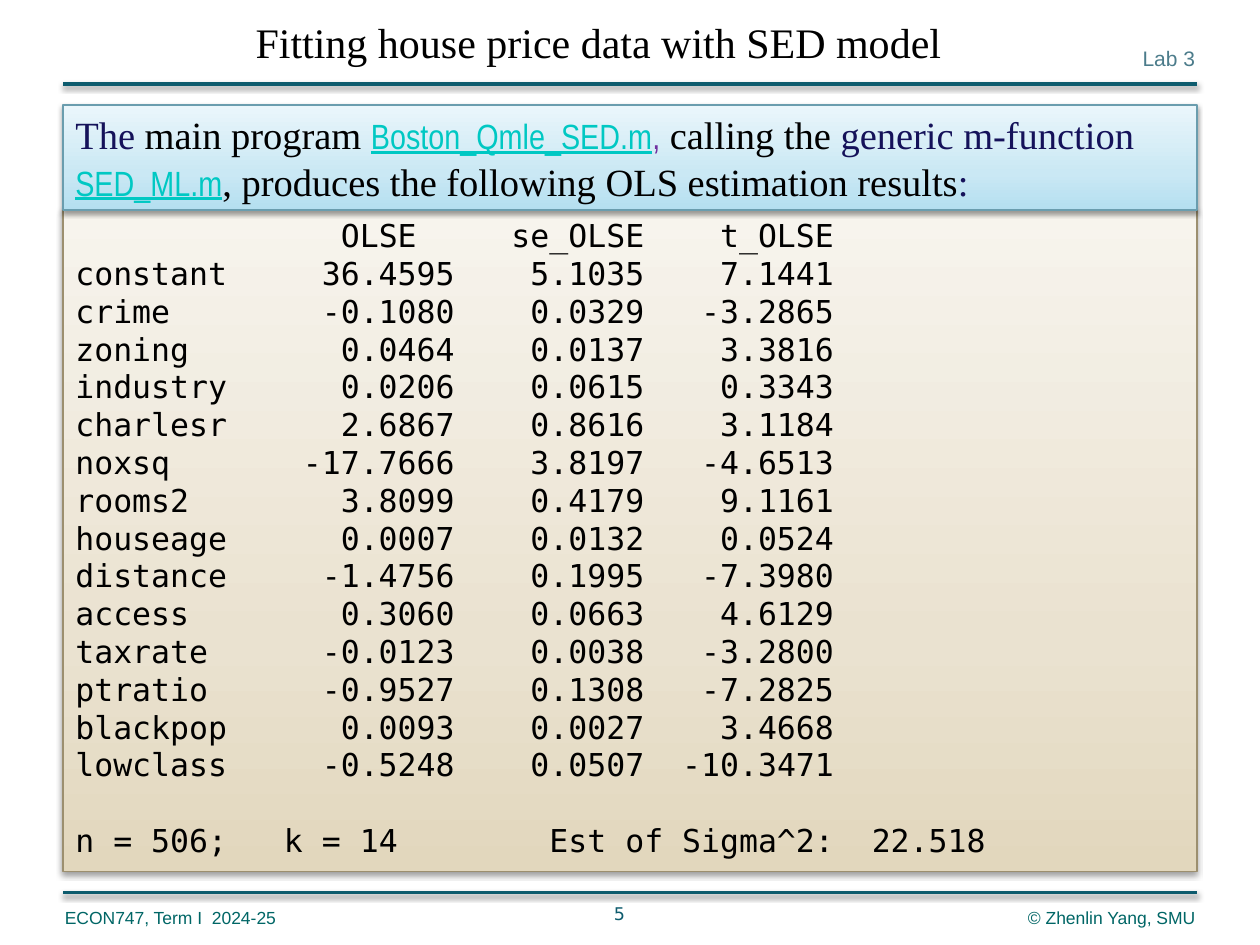
from lxml.etree import SubElement
from pptx import Presentation
from pptx.dml.color import RGBColor
from pptx.enum.shapes import MSO_CONNECTOR, MSO_SHAPE
from pptx.enum.text import MSO_ANCHOR, PP_ALIGN
from pptx.oxml import parse_xml
from pptx.oxml.ns import nsdecls, qn
from pptx.util import Inches, Pt

BLACK = RGBColor(0, 0, 0)
TEAL = RGBColor(0x0D, 0x5B, 0x6D)
GREEN = RGBColor(0x00, 0x66, 0x66)
SLATE = RGBColor(0x4C, 0x7C, 0x8B)
NAVY = RGBColor(0x15, 0x12, 0x5A)
AQUA = RGBColor(0x00, 0xC8, 0xC3)
PURPLE = RGBColor(0x70, 0x30, 0xA0)
TAN = RGBColor(0x9C, 0x8F, 0x6F)
BLUE = RGBColor(0x6A, 0x9D, 0xAE)
SAND = [RGBColor(0xE2, 0xD7, 0xBD), RGBColor(0xEA, 0xE2, 0xD0), RGBColor(0xF7, 0xF4, 0xED)]
SKY = [RGBColor(0xB4, 0xDF, 0xF0), RGBColor(0xCA, 0xE8, 0xF4), RGBColor(0xEA, 0xF6, 0xFB)]
SERIF, SANS, SLIM, MONO = "Times New Roman", "Arial", "Arial Narrow", "DejaVu Sans Mono"

deck = Presentation()
deck.slide_width, deck.slide_height = Inches(10), Inches(7.5)
slide = deck.slides.add_slide(deck.slide_layouts[6])
shapes = slide.shapes
# Grid of 120 columns by 90 rows
COL, ROW = deck.slide_width / 120, deck.slide_height / 90


def write(para, text, font, size, color, under=False):
    run = para.add_run()
    run.text = text
    run.font.name, run.font.size = font, Pt(size)
    run.font.color.rgb = color
    run.font.underline = under


def shade(shape):
    shape._element.spPr.append(parse_xml(
        f'<a:effectLst {nsdecls("a")}><a:outerShdw blurRad="{Pt(3.1)}" dist="{Pt(1.6)}" '
        'dir="5400000" rotWithShape="0"><a:srgbClr val="000000"><a:alpha val="38000"/>'
        '</a:srgbClr></a:outerShdw></a:effectLst>'))


# Rules above and below the body
for row in (85, 8):
    rule = shapes.add_connector(MSO_CONNECTOR.STRAIGHT, int(6 * COL), int(row * ROW),
                                int(114 * COL), int(row * ROW))
    rule.line.color.rgb, rule.line.width = TEAL, Pt(2)
    shade(rule)

# Title, lab tag, footer and page number
LEFT, MID, RIGHT = PP_ALIGN.LEFT, PP_ALIGN.CENTER, PP_ALIGN.RIGHT
labels = [
    ("Lab 3", 107, 3.7, 8, 3.6, RIGHT, SANS, 12, SLATE),
    ("ECON747, Term I  2024-25", 5, 85.8, 28, 3.2, LEFT, SANS, 10, GREEN),
    ("© Zhenlin Yang, SMU", 87, 85.8, 28, 3.2, RIGHT, SANS, 10, GREEN),
    ("Fitting house price data with SED model", 17, 1, 80, 6, MID, SERIF, 24, BLACK),
    ("5", 45, 85.4, 28, 3.6, MID, "DejaVu Sans", 10, TEAL),
]
for text, x, y, wide, high, align, font, size, color in labels:
    box = shapes.add_textbox(int(x * COL), int(y * ROW), int(wide * COL), int(high * ROW))
    frame = box.text_frame
    frame.word_wrap = True
    frame.vertical_anchor = MSO_ANCHOR.TOP if text == "5" else MSO_ANCHOR.MIDDLE
    frame.paragraphs[0].alignment = align
    write(frame.paragraphs[0], text, font, size, color)

# Shaded panels: results, then the intro on top
frames = []
for y, high, stops, edge, anchor in [(20, 63, SAND, TAN, MSO_ANCHOR.TOP),
                                     (10, 10, SKY, BLUE, MSO_ANCHOR.MIDDLE)]:
    panel = shapes.add_shape(MSO_SHAPE.RECTANGLE, int(6 * COL), int(y * ROW),
                             int(108 * COL), int(high * ROW))
    marks = "".join(f'<a:gs pos="{pos}"><a:srgbClr val="{color}"/></a:gs>'
                    for pos, color in zip((0, 35000, 100000), stops))
    panel._element.spPr.append(parse_xml(
        f'<a:gradFill {nsdecls("a")} rotWithShape="1"><a:gsLst>{marks}</a:gsLst>'
        '<a:lin ang="16200000" scaled="0"/></a:gradFill>'))
    panel.line.color.rgb, panel.line.width = edge, Pt(0.75)
    shade(panel)
    panel.text_frame.word_wrap = True
    panel.text_frame.vertical_anchor = anchor
    frames.append(panel.text_frame)
body, intro = frames

# Intro sentence
para = intro.paragraphs[0]
para.alignment, para.space_before = LEFT, Pt(6)
for text, font, size, color, under in [
    ("The ", SERIF, 22, NAVY, False),
    ("main program ", SERIF, 22, BLACK, False),
    ("Boston_Qmle_SED.m", SLIM, 20, AQUA, True),
    (",", SLIM, 20, PURPLE, False),
    (" calling the ", SERIF, 22, BLACK, False),
    ("generic m-function ", SERIF, 22, NAVY, False),
    ("SED_ML.m", SLIM, 20, AQUA, True),
    (", produces the following OLS estimation results", SERIF, 22, BLACK, False),
    (":", SERIF, 22, NAVY, False),
]:
    write(para, text, font, size, color, under)

# Results: tab stops counted in characters of the fixed-width font
CHAR, LINE = Inches(0.1505), Pt(21.6)
HEAD = [(18, "r"), (30, "r"), (40, "r")]
DATA = [(20, "r"), (30, "r"), (40, "r")]
FOOT = [(11, "l"), (25, "l"), (42, "l")]
rows = [
    ("", "OLSE", "se_OLSE", "t_OLSE"),
    ("constant", "36.4595", "5.1035", "7.1441"),
    ("crime", "-0.1080", "0.0329", "-3.2865"),
    ("zoning", "0.0464", "0.0137", "3.3816"),
    ("industry", "0.0206", "0.0615", "0.3343"),
    ("charlesr", "2.6867", "0.8616", "3.1184"),
    ("noxsq", "-17.7666", "3.8197", "-4.6513"),
    ("rooms2", "3.8099", "0.4179", "9.1161"),
    ("houseage", "0.0007", "0.0132", "0.0524"),
    ("distance", "-1.4756", "0.1995", "-7.3980"),
    ("access", "0.3060", "0.0663", "4.6129"),
    ("taxrate", "-0.0123", "0.0038", "-3.2800"),
    ("ptratio", "-0.9527", "0.1308", "-7.2825"),
    ("blackpop", "0.0093", "0.0027", "3.4668"),
    ("lowclass", "-0.5248", "0.0507", "-10.3471"),
    ("n = 506;", "k = 14", "Est of Sigma^2:", "22.518"),
]
last = len(rows) - 1
for i, row in enumerate(rows):
    para = body.paragraphs[0] if i == 0 else body.add_paragraph()
    para.alignment, para.line_spacing = LEFT, LINE
    if i == last:
        para.space_before = LINE
    tabs = SubElement(para._p.get_or_add_pPr(), qn("a:tabLst"))
    for pos, side in {0: HEAD, last: FOOT}.get(i, DATA):
        SubElement(tabs, qn("a:tab"), pos=str(pos * CHAR), algn=side)
    write(para, "\t".join(row), MONO, 18, BLACK)

deck.save("out.pptx")
